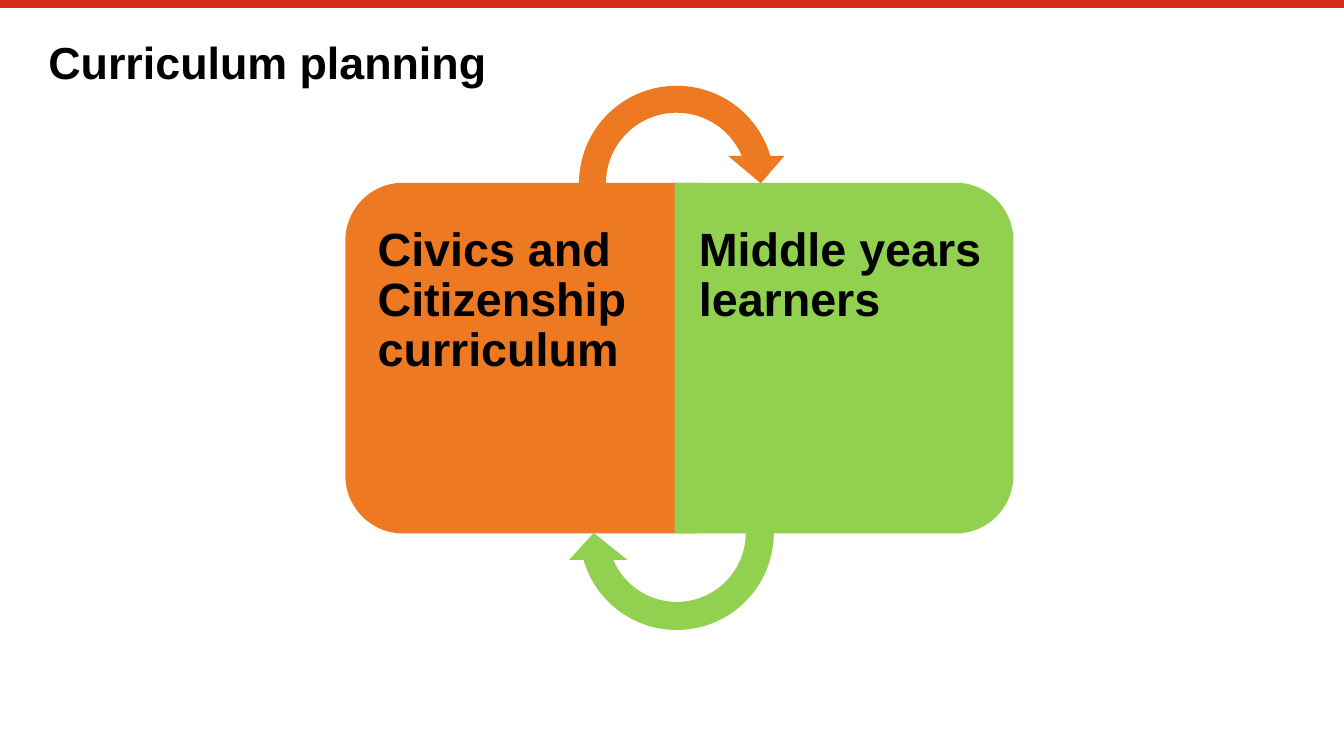
from math import cos, sin, radians
from lxml.etree import SubElement
from pptx import Presentation
from pptx.dml.color import RGBColor
from pptx.enum.shapes import MSO_CONNECTOR, MSO_SHAPE
from pptx.enum.text import MSO_ANCHOR, PP_ALIGN
from pptx.oxml.ns import qn
from pptx.util import Inches, Pt

ORANGE = "ED7A23"
GREEN = "92D050"
RED = "D52B1E"
BLACK = "000000"
TOP, BASE = 1.36, 3.97


def color(code):
    return RGBColor.from_string(code)


def paint(shape, fill):
    shape.shadow.inherit = False
    shape.fill.solid()
    shape.fill.fore_color.rgb = color(fill)
    shape.line.fill.background()


def write(shape, text, size=25, fill=BLACK, bold=True, left=0, right=0, top=0, bottom=0):
    frame = shape.text_frame
    frame.word_wrap = True
    frame.vertical_anchor = MSO_ANCHOR.TOP
    frame.margin_left, frame.margin_right = Inches(left), Inches(right)
    frame.margin_top, frame.margin_bottom = Inches(top), Inches(bottom)
    para = frame.paragraphs[0]
    para.alignment = PP_ALIGN.LEFT
    para.line_spacing = 0.9
    run = para.add_run()
    run.text = text
    run.font.name = "Arial"
    run.font.size = Pt(size)
    run.font.bold = bold
    run.font.color.rgb = color(fill)


def add_bar(slide):
    bar = slide.shapes.add_connector(
        MSO_CONNECTOR.STRAIGHT, 0, Inches(0.03), Inches(10), Inches(0.03))
    bar.line.width = Pt(4.2)
    bar.line.color.rgb = color(RED)
    SubElement(bar._element.spPr, qn("a:effectLst"))


def add_title(slide, text):
    box = slide.shapes.add_textbox(Inches(0.36), Inches(0.3), Inches(9.29), Inches(0.39))
    write(box, text, size=24)


def add_half(slide, text, outer, inner, fill, radius=0.43, **pads):
    side = 1 if inner > outer else -1
    turns = [radians(step) for step in range(0, 91, 3)]
    curve = [(outer + side * radius * (1 - cos(turn)), radius * (1 - sin(turn)))
             for turn in turns]
    upper = [(x, TOP + drop) for x, drop in curve]
    lower = [(x, BASE - drop) for x, drop in reversed(curve)]
    points = upper + [(inner, TOP), (inner, BASE)] + lower
    points = [(Inches(x), Inches(y)) for x, y in points]
    pen = slide.shapes.build_freeform(*points[0])
    pen.add_line_segments(points[1:], close=True)
    half = pen.convert_to_shape()
    paint(half, fill)
    write(half, text, top=0.32, bottom=0.32, **pads)


def add_arrow(slide, top, fill, width, head, angle=0):
    arrow = slide.shapes.add_shape(
        MSO_SHAPE.CIRCULAR_ARROW, Inches(4.2), Inches(top), Inches(1.67), Inches(1.67))
    for index, value in enumerate((width, 11.42, 204.58, 108, head)):
        arrow.adjustments[index] = value
    arrow.rotation = angle
    paint(arrow, fill)


def main():
    deck = Presentation()
    deck.slide_width = Inches(10)
    deck.slide_height = deck.slide_width * 9 // 16
    slide = deck.slides.add_slide(deck.slide_layouts[6])
    add_bar(slide)
    add_title(slide, "Curriculum planning")
    add_arrow(slide, 0.53, ORANGE, 0.12, 0.125)
    add_half(slide, "Civics and Citizenship curriculum", 2.57, 5.19, ORANGE,
             left=0.24, right=0.17)
    add_half(slide, "Middle years learners", 7.54, 5.02, GREEN,
             left=0.18, right=0.2)
    add_arrow(slide, 3.13, GREEN, 0.125, 0.13, angle=180)
    deck.save("out.pptx")


if __name__ == "__main__":
    main()
